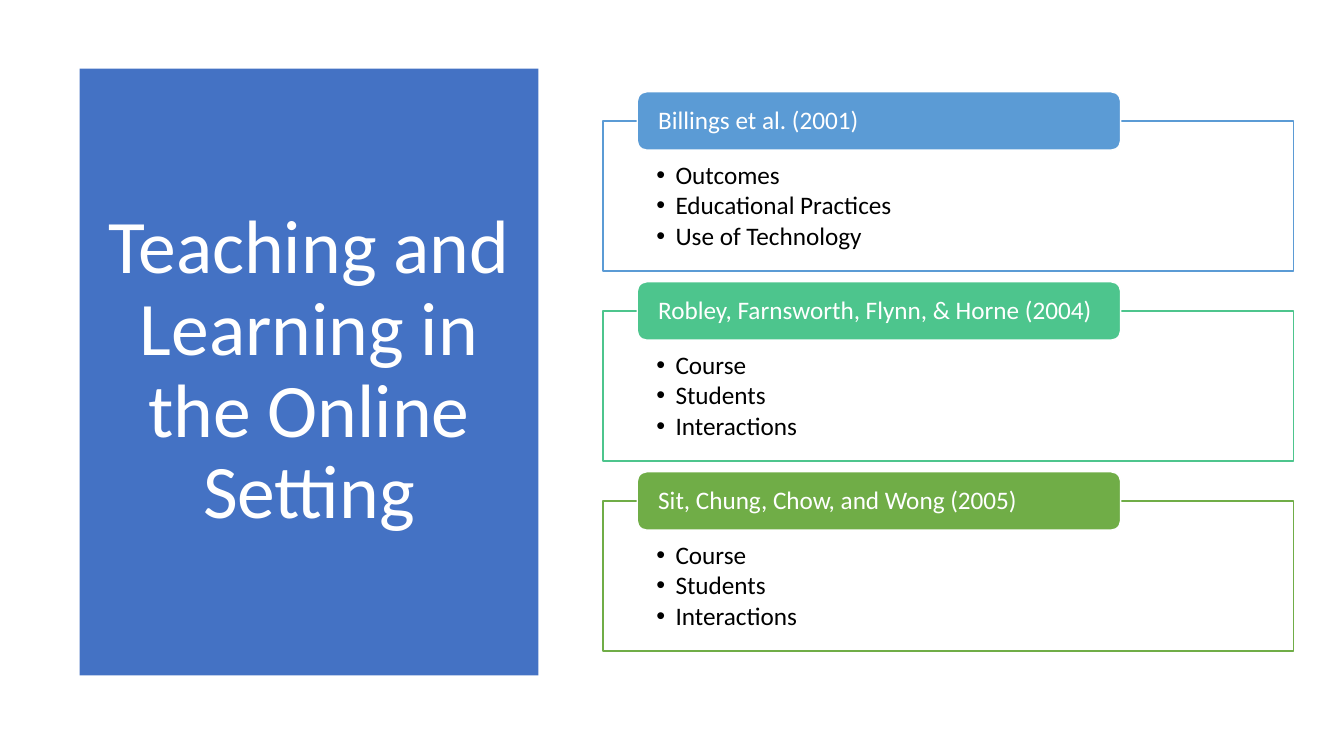
from lxml import etree
from pptx import Presentation
from pptx import util as u
from pptx.dml.color import RGBColor
from pptx.enum import shapes, text
from pptx.oxml.ns import qn

TITLE = "Teaching and Learning in the Online Setting"
STUDIES = [
    ("Billings et al. (2001)", "blue",
     ["Outcomes", "Educational Practices", "Use of Technology"]),
    ("Robley, Farnsworth, Flynn, & Horne (2004)", "teal",
     ["Course", "Students", "Interactions"]),
    ("Sit, Chung, Chow, and Wong (2005)", "green",
     ["Course", "Students", "Interactions"]),
]
COLORS = {"panel": "4472C4", "blue": "5B9BD5", "teal": "4DC58D",
          "green": "70AD47", "white": "FFFFFF", "black": "000000"}
FONT = "Calibri"
SLIDE_W, SLIDE_H = 13.33, 7.5
PANEL = (0.79, 0.68, 4.55, 6.02)
BOX_LEFT, BOX_TOP, BOX_W, BOX_H = 5.98, 1.2, 6.85, 1.49
ROW_PITCH = 1.885
TAB_INDENT, TAB_RISE, TAB_H = 0.34, 0.29, 0.58
TAB_W = BOX_W * 0.7
BULLET_INDENT = 0.19


def rgb(name):
    return RGBColor.from_string(COLORS[name])


def paint(shape, fill, line):
    shape.shadow.inherit = False
    shape.fill.solid()
    shape.fill.fore_color.rgb = rgb(fill)
    shape.line.color.rgb = rgb(line)
    shape.line.width = u.Pt(1)


def write(shape, lines, size, color, align, anchor, insets, after=0):
    frame = shape.text_frame
    frame.text = "\n".join(lines)
    frame.word_wrap = True
    frame.auto_size = text.MSO_AUTO_SIZE.NONE
    frame.vertical_anchor = anchor
    (frame.margin_left, frame.margin_top,
     frame.margin_right, frame.margin_bottom) = map(u.Inches, insets)
    for paragraph in frame.paragraphs:
        paragraph.alignment = align
        paragraph.line_spacing = 0.9
        paragraph.space_before = u.Pt(0)
        paragraph.space_after = u.Pt(after)
        font = paragraph.runs[0].font
        font.name, font.size = FONT, u.Pt(size)
        font.color.rgb = rgb(color)


def add_bullet(paragraph):
    paragraph.level = 1
    props = paragraph._p.get_or_add_pPr()
    props.set("marL", str(u.Inches(BULLET_INDENT)))
    props.set("indent", str(-u.Inches(BULLET_INDENT)))
    etree.SubElement(props, qn("a:buFont")).set("typeface", "Arial")
    etree.SubElement(props, qn("a:buChar")).set("char", "•")


def add_study(slide, row, heading, accent, points):
    top = BOX_TOP + row * ROW_PITCH
    box = slide.shapes.add_shape(
        shapes.MSO_SHAPE.RECTANGLE,
        *map(u.Inches, (BOX_LEFT, top, BOX_W, BOX_H)))
    paint(box, "white", accent)
    white = box.fill._xPr.find(qn("a:solidFill"))[0]
    etree.SubElement(white, qn("a:alpha")).set("val", "90000")
    write(box, points, 18, "black", text.PP_ALIGN.LEFT,
          text.MSO_ANCHOR.TOP, (0.53, 0.41, 0.53, 0.14), after=2.5)
    for paragraph in box.text_frame.paragraphs:
        add_bullet(paragraph)

    tab = slide.shapes.add_shape(
        shapes.MSO_SHAPE.ROUNDED_RECTANGLE,
        *map(u.Inches, (BOX_LEFT + TAB_INDENT, top - TAB_RISE, TAB_W, TAB_H)))
    paint(tab, accent, "white")
    write(tab, [heading], 18, "white", text.PP_ALIGN.LEFT,
          text.MSO_ANCHOR.MIDDLE, (0.18, 0, 0.18, 0))


def main():
    deck = Presentation()
    deck.slide_width, deck.slide_height = u.Inches(SLIDE_W), u.Inches(SLIDE_H)
    slide = deck.slides.add_slide(deck.slide_layouts.get_by_name("Title Only"))

    title = slide.shapes.title
    title.left, title.top, title.width, title.height = map(u.Inches, PANEL)
    title.fill.solid()
    title.fill.fore_color.rgb = rgb("panel")
    write(title, [TITLE], 54, "white", text.PP_ALIGN.CENTER,
          text.MSO_ANCHOR.MIDDLE, (0.1, 0.05, 0.1, 0.05))

    for row, study in enumerate(STUDIES):
        add_study(slide, row, *study)
    deck.save("out.pptx")


if __name__ == "__main__":
    main()
